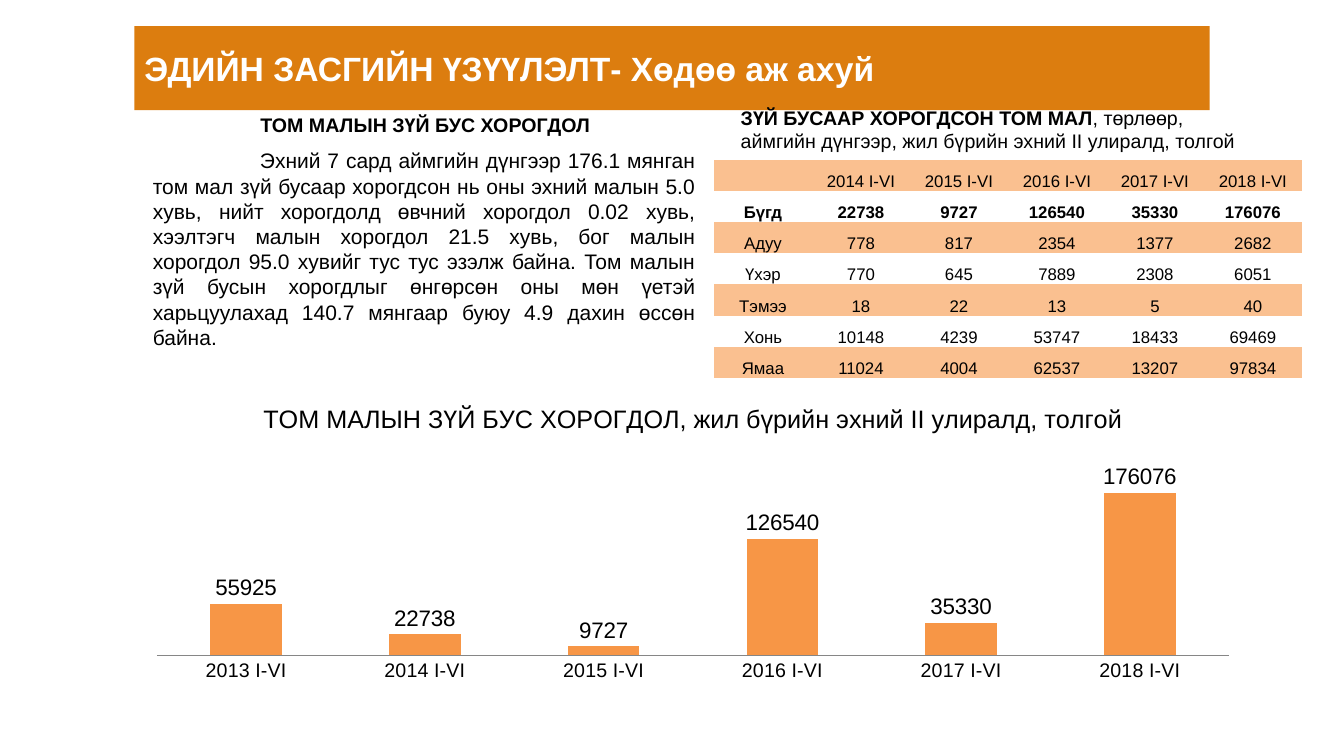
from dataclasses import dataclass

from lxml.etree import SubElement
from pptx import Presentation
from pptx.chart.data import CategoryChartData
from pptx.dml.color import RGBColor
from pptx.enum.chart import XL_CHART_TYPE, XL_LABEL_POSITION, XL_TICK_LABEL_POSITION, XL_TICK_MARK
from pptx.enum.text import MSO_ANCHOR, MSO_AUTO_SIZE, PP_ALIGN
from pptx.oxml import parse_xml
from pptx.oxml.ns import nsdecls, qn
from pptx.util import Emu, Pt


@dataclass(frozen=True)
class Theme:
    font: str = "Arial"
    banner: RGBColor = RGBColor(0xDC, 0x7D, 0x0F)
    band: RGBColor = RGBColor(0xFA, 0xC0, 0x90)
    bar: RGBColor = RGBColor(0xF7, 0x96, 0x46)
    axis: RGBColor = RGBColor(0x86, 0x86, 0x86)
    text: RGBColor = RGBColor(0, 0, 0)
    white: RGBColor = RGBColor(0xFF, 0xFF, 0xFF)
    title_size: int = 24
    chart_title_size: int = 18
    value_size: int = 16
    body_size: int = 15
    body_line: int = 18
    heading_size: int = 14
    table_size: int = 12


THEME = Theme()
PLAIN_TABLE_STYLE = "{2D5ABB26-0587-4C30-8999-92F81FD0307C}"

BODY = (
    "Эхний 7 сард аймгийн дүнгээр 176.1 мянган том мал зүй бусаар хорогдсон нь "
    "оны эхний малын 5.0 хувь, нийт хорогдолд өвчний хорогдол 0.02 хувь, хээлтэгч "
    "малын хорогдол 21.5 хувь, бог малын хорогдол 95.0 хувийг тус тус эзэлж байна. "
    "Том малын зүй бусын хорогдлыг өнгөрсөн оны мөн үетэй харьцуулахад 140.7 "
    "мянгаар буюу 4.9 дахин өссөн байна."
)
LIVESTOCK = [
    ["", "2014 I-VI", "2015 I-VI", "2016 I-VI", "2017 I-VI", "2018 I-VI"],
    ["Бүгд", 22738, 9727, 126540, 35330, 176076],
    ["Адуу", 778, 817, 2354, 1377, 2682],
    ["Үхэр", 770, 645, 7889, 2308, 6051],
    ["Тэмээ", 18, 22, 13, 5, 40],
    ["Хонь", 10148, 4239, 53747, 18433, 69469],
    ["Ямаа", 11024, 4004, 62537, 13207, 97834],
]
TOTAL_ROW = 1


def px(value):
    return Emu(value * 9525)


def style_font(font, size, color=THEME.text, bold=False):
    font.name = THEME.font
    font.size = Pt(size)
    font.bold = bold
    font.color.rgb = color


def place(shape, left, top, width, height):
    shape.left, shape.top, shape.width, shape.height = map(px, (left, top, width, height))


def set_title(slide, text, box):
    title = slide.shapes.title
    place(title, *box)
    title.fill.solid()
    title.fill.fore_color.rgb = THEME.banner
    frame = title.text_frame
    frame.text = text
    frame.auto_size = MSO_AUTO_SIZE.NONE
    frame.vertical_anchor = MSO_ANCHOR.MIDDLE
    paragraph = frame.paragraphs[0]
    paragraph.alignment = PP_ALIGN.LEFT
    style_font(paragraph.font, THEME.title_size, THEME.white, bold=True)


def set_body(slide, text, box, first_line):
    body = slide.placeholders[1]
    place(body, *box)
    frame = body.text_frame
    frame.text = text
    frame.auto_size = MSO_AUTO_SIZE.NONE
    paragraph = frame.paragraphs[0]
    properties = paragraph._p.get_or_add_pPr()
    properties.set("marL", "0")
    properties.set("indent", str(px(first_line)))
    SubElement(properties, qn("a:buNone"))
    paragraph.alignment = PP_ALIGN.JUSTIFY
    paragraph.space_before = Pt(0)
    paragraph.line_spacing = Pt(THEME.body_line)
    style_font(paragraph.font, THEME.body_size)


def add_caption(slide, bold_text, plain_text, box):
    frame = slide.shapes.add_textbox(*map(px, box)).text_frame
    frame.word_wrap = True
    paragraph = frame.paragraphs[0]
    for text, bold in ((bold_text, True), (plain_text, False)):
        run = paragraph.add_run()
        run.text = text
        style_font(run.font, THEME.heading_size, bold=bold)


def add_plain_table(slide, rows, box):
    frame = slide.shapes.add_table(len(rows), len(rows[0]), *map(px, box))
    table = frame.table
    table.first_row = table.horz_banding = False
    table._tbl.tblPr.find(qn("a:tableStyleId")).text = PLAIN_TABLE_STYLE
    return table


def fill_cell(cell, text, size, bold, anchor, alignment, fill=None):
    cell.margin_left = cell.margin_right = cell.margin_top = cell.margin_bottom = 0
    cell.vertical_anchor = anchor
    if fill is None:
        cell.fill.background()
    else:
        cell.fill.solid()
        cell.fill.fore_color.rgb = fill
    cell.text = str(text)
    paragraph = cell.text_frame.paragraphs[0]
    paragraph.alignment = alignment
    style_font(paragraph.font, size, bold=bold)


def add_heading_table(slide, text, box):
    table = add_plain_table(slide, [[text]], box)
    fill_cell(table.cell(0, 0), text, THEME.heading_size, True, MSO_ANCHOR.MIDDLE, PP_ALIGN.LEFT)


def add_livestock_table(slide, box):
    table = add_plain_table(slide, LIVESTOCK, box)
    for row, values in enumerate(LIVESTOCK):
        band = THEME.band if row % 2 == 0 else None
        for column, value in enumerate(values):
            fill_cell(table.cell(row, column), value, THEME.table_size, row == TOTAL_ROW,
                      MSO_ANCHOR.BOTTOM, PP_ALIGN.CENTER, band)


def set_plot_layout(chart, **fractions):
    plot_area = chart._chartSpace.chart.plotArea
    for layout in plot_area.findall(qn("c:layout")):
        plot_area.remove(layout)
    sizes = "".join(f'<c:{name} val="{value}"/>' for name, value in fractions.items())
    plot_area.insert(0, parse_xml(
        f'<c:layout {nsdecls("c")}><c:manualLayout><c:layoutTarget val="inner"/>'
        f'<c:xMode val="edge"/><c:yMode val="edge"/>{sizes}</c:manualLayout></c:layout>'))


def add_loss_chart(slide, title, box):
    data = CategoryChartData()
    data.categories = ["2013 I-VI"] + LIVESTOCK[0][1:]
    data.add_series("Series 1", [55925] + LIVESTOCK[TOTAL_ROW][1:])
    chart = slide.shapes.add_chart(XL_CHART_TYPE.COLUMN_CLUSTERED, *map(px, box), data).chart
    style_font(chart.font, THEME.heading_size)
    chart.has_legend = False

    # Title
    chart.has_title = True
    frame = chart.chart_title.text_frame
    frame.text = title
    style_font(frame.paragraphs[0].runs[0].font, THEME.chart_title_size)
    chart.chart_title.include_in_layout = False

    # Axes
    category_axis = chart.category_axis
    category_axis.major_tick_mark = XL_TICK_MARK.NONE
    category_axis.format.line.color.rgb = THEME.axis
    style_font(category_axis.tick_labels.font, THEME.heading_size)
    value_axis = chart.value_axis
    value_axis.minimum_scale, value_axis.maximum_scale = 0, 200000
    value_axis.has_major_gridlines = False
    value_axis.tick_label_position = XL_TICK_LABEL_POSITION.NONE
    value_axis.visible = False

    # Columns and their values
    plot = chart.plots[0]
    plot.gap_width, plot.overlap = 150, -25
    plot.vary_by_categories = False
    series = plot.series[0]
    series.format.fill.solid()
    series.format.fill.fore_color.rgb = THEME.bar
    labels = series.data_labels
    labels.show_value = True
    labels.position = XL_LABEL_POSITION.OUTSIDE_END
    style_font(labels.font, THEME.value_size)
    set_plot_layout(chart, x=0.02, y=0.28, w=0.96, h=0.61)


def main():
    presentation = Presentation()
    presentation.slide_width, presentation.slide_height = px(1280), px(720)
    slide = presentation.slides.add_slide(presentation.slide_layouts[1])

    # Banner and left column
    set_title(slide, "ЭДИЙН ЗАСГИЙН ҮЗҮҮЛЭЛТ- Хөдөө аж ахуй", (128, 25, 1024, 80))
    set_body(slide, BODY, (136, 136, 536, 206), first_line=102)
    add_heading_table(slide, "ТОМ МАЛЫН ЗҮЙ БУС ХОРОГДОЛ", (248, 104, 328, 32))

    # Right column
    add_caption(slide, "ЗҮЙ БУСААР ХОРОГДСОН ТОМ МАЛ",
                ", төрлөөр, аймгийн дүнгээр, жил бүрийн эхний II улиралд, толгой",
                (696, 96, 504, 55))
    add_livestock_table(slide, (680, 152, 560, 208))

    # Yearly losses
    add_loss_chart(slide, "ТОМ МАЛЫН ЗҮЙ БУС ХОРОГДОЛ, жил бүрийн эхний II улиралд, толгой",
                   (128, 368, 1064, 288))
    presentation.save("out.pptx")


if __name__ == "__main__":
    main()
